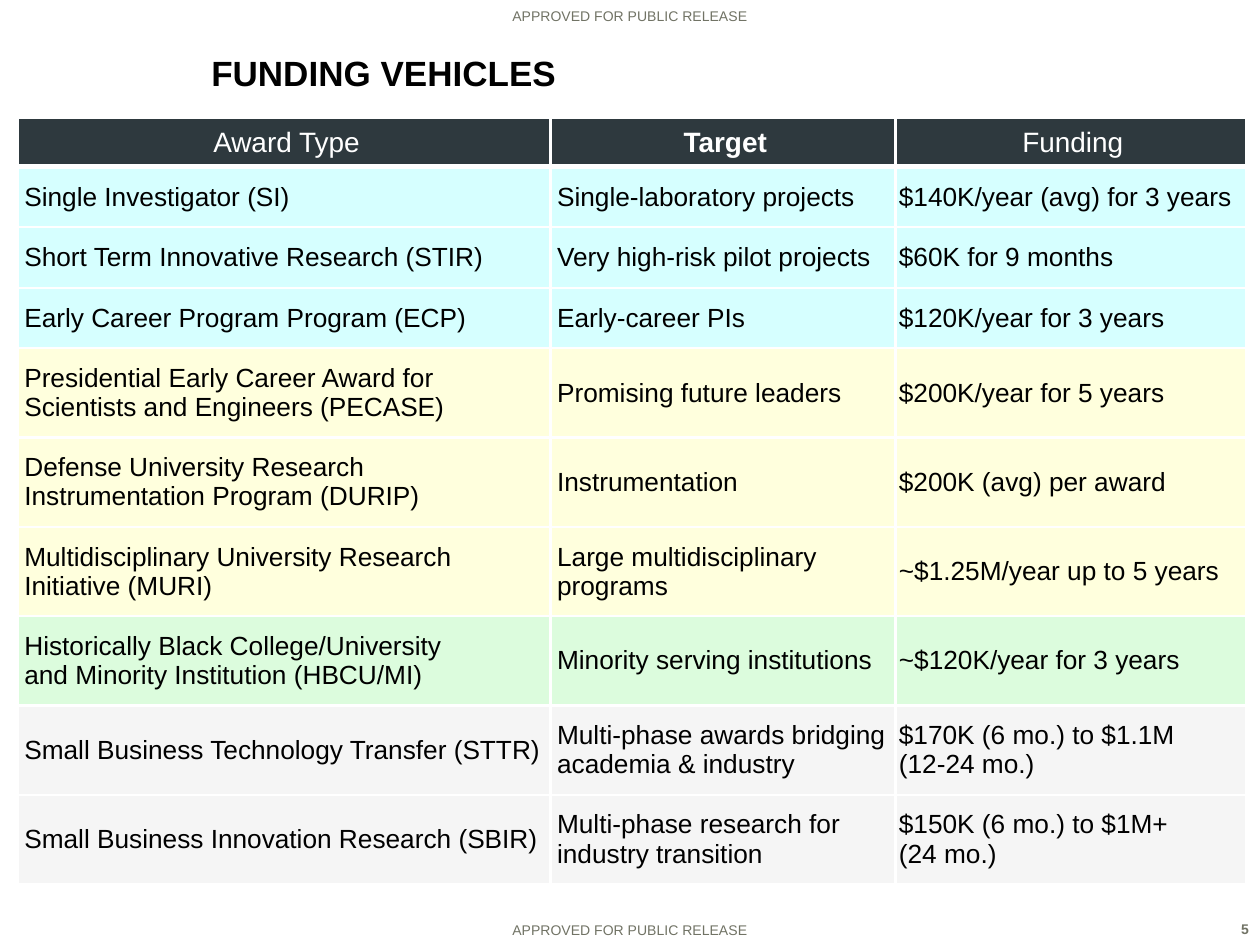
import pptx
import pptx.util
import pptx.dml.color
import pptx.enum.text
from lxml import etree
from pptx.oxml.ns import qn
from pptx.util import Cm, Pt

Align = pptx.enum.text.PP_ALIGN
Anchor = pptx.enum.text.MSO_ANCHOR

FONT = "Arial"
COLOURS = {
    "text": "000000",
    "marking": "717365",
    "header": "2E393E",
    "white": "FFFFFF",
    "core": "CCFFFF",
    "department": "FFFFD5",
    "minority": "D4FCD5",
    "business": "F3F3F3",
}
MARKING = "APPROVED FOR PUBLIC RELEASE"
HEADINGS = ["Award Type", "Target", "Funding"]
# Funding group, award type, target, funding
AWARDS = [
    ("core", "Single Investigator (SI)", "Single-laboratory projects",
     "$140K/year (avg) for 3 years"),
    ("core", "Short Term Innovative Research (STIR)",
     "Very high-risk pilot projects", "$60K for 9 months"),
    ("core", "Early Career Program Program (ECP)", "Early-career PIs",
     "$120K/year for 3 years"),
    ("department",
     "Presidential Early Career Award for Scientists and Engineers (PECASE)",
     "Promising future leaders", "$200K/year for 5 years"),
    ("department",
     "Defense University Research Instrumentation Program (DURIP)",
     "Instrumentation", "$200K (avg) per award"),
    ("department", "Multidisciplinary University Research Initiative (MURI)",
     "Large multidisciplinary programs", "~$1.25M/year up to 5 years"),
    ("minority",
     "Historically Black College/University\nand Minority Institution (HBCU/MI)",
     "Minority serving institutions", "~$120K/year for 3 years"),
    ("business", "Small Business Technology Transfer (STTR)",
     "Multi-phase awards bridging academia & industry",
     "$170K (6 mo.) to $1.1M\n(12-24 mo.)"),
    ("business", "Small Business Innovation Research (SBIR)",
     "Multi-phase research for industry transition",
     "$150K (6 mo.) to $1M+\n(24 mo.)"),
]
COLUMN_WIDTHS = [10.74, 6.95, 7.06]
HEADER_HEIGHT, SINGLE_HEIGHT, DOUBLE_HEIGHT = 0.97, 1.22, 1.8


def rgb(name):
    return pptx.dml.color.RGBColor.from_string(COLOURS[name])


def write(paragraph, text, size, colour, bold=False, align=Align.LEFT):
    """Fill a paragraph with one run per line of text."""
    paragraph.alignment = align
    for number, line in enumerate(text.split("\n")):
        if number:
            paragraph.add_line_break()
        run = paragraph.add_run()
        run.text = line
        run.font.name = FONT
        run.font.size = Pt(size)
        run.font.bold = bold
        run.font.color.rgb = rgb(colour)


def add_label(slide, place, text, size, colour, bold=False,
              align=Align.LEFT, anchor=Anchor.BOTTOM):
    frame = slide.shapes.add_textbox(*map(Cm, place)).text_frame
    frame.word_wrap = True
    frame.vertical_anchor = anchor
    write(frame.paragraphs[0], text, size, colour, bold, align)


def set_borders(cell, widths):
    """Draw white borders; widths maps the sides L, R, T, B to points."""
    properties = cell._tc.get_or_add_tcPr()
    for side in "LRTB":
        line = etree.SubElement(properties, qn(f"a:ln{side}"),
                                w=str(Pt(widths[side])))
        fill = etree.SubElement(line, qn("a:solidFill"))
        etree.SubElement(fill, qn("a:srgbClr"), val=COLOURS["white"])


def fill_cell(cell, colour, opacity=100):
    cell.fill.solid()
    cell.fill.fore_color.rgb = rgb(colour)
    if opacity < 100:
        shade = cell._tc.tcPr.find(f"{qn('a:solidFill')}/{qn('a:srgbClr')}")
        etree.SubElement(shade, qn("a:alpha"), val=str(opacity * 1000))


def set_margins(cell, left, right, vertical):
    cell.margin_left, cell.margin_right = Cm(left), Cm(right)
    cell.margin_top = cell.margin_bottom = Cm(vertical)
    cell.vertical_anchor = Anchor.MIDDLE


def add_awards_table(slide):
    heights = [HEADER_HEIGHT] + [
        SINGLE_HEIGHT if group == "core" else DOUBLE_HEIGHT
        for group, *_ in AWARDS]
    last_row, last_column = len(AWARDS), len(HEADINGS) - 1
    table = slide.shapes.add_table(
        len(heights), len(HEADINGS), Cm(0.36), Cm(2.39),
        Cm(sum(COLUMN_WIDTHS)), Cm(sum(heights))).table
    for column, width in zip(table.columns, COLUMN_WIDTHS):
        column.width = Cm(width)
    for row, height in zip(table.rows, heights):
        row.height = Cm(height)

    for r, (group, *texts) in enumerate([("header", *HEADINGS), *AWARDS]):
        for c, text in enumerate(texts):
            cell = table.cell(r, c)
            set_borders(cell, {
                "L": 1 if c == 0 else 1.5,
                "R": 1 if c == last_column else 1.5,
                "T": 1 if r <= 1 else 1.5,
                "B": 3 if r == 0 else 1 if r == last_row else 1.5,
            })
            paragraph = cell.text_frame.paragraphs[0]
            if r == 0:
                set_margins(cell, 0.14, 0.05, 0.05)
                fill_cell(cell, group)
                write(paragraph, text, 16, "white", text == "Target",
                      Align.CENTER)
            else:
                set_margins(cell, 0.07 if c == last_column else 0.13, 0.1, 0.07)
                fill_cell(cell, group, opacity=80)
                write(paragraph, text, 15, "text")


def main():
    deck = pptx.Presentation()
    deck.slide_width, deck.slide_height = Cm(25.4), Cm(19.05)
    slide = deck.slides.add_slide(deck.slide_layouts[6])
    for place in [(3.81, 18.44, 17.78, 0.61), (0, 0, 25.4, 0.61)]:
        add_label(slide, place, MARKING, 8, "marking", align=Align.CENTER)
    add_label(slide, (24.26, 18.44, 1.17, 0.61), "5", 8, "marking", bold=True,
              align=Align.RIGHT, anchor=Anchor.TOP)
    add_label(slide, (4.01, 0.76, 16.51, 1.4), "FUNDING VEHICLES", 20, "text",
              bold=True, anchor=Anchor.MIDDLE)
    add_awards_table(slide)
    deck.save("out.pptx")


if __name__ == "__main__":
    main()
